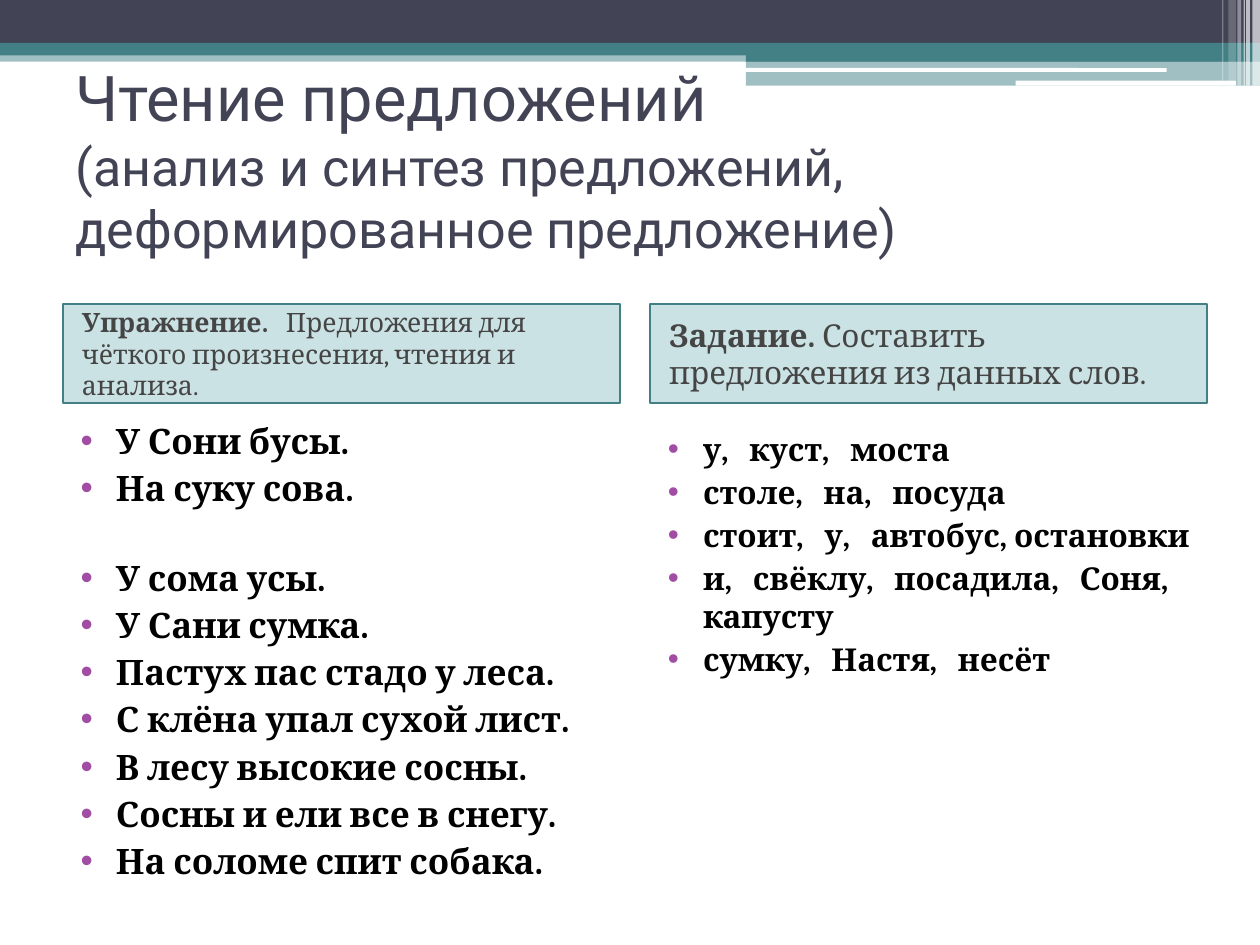
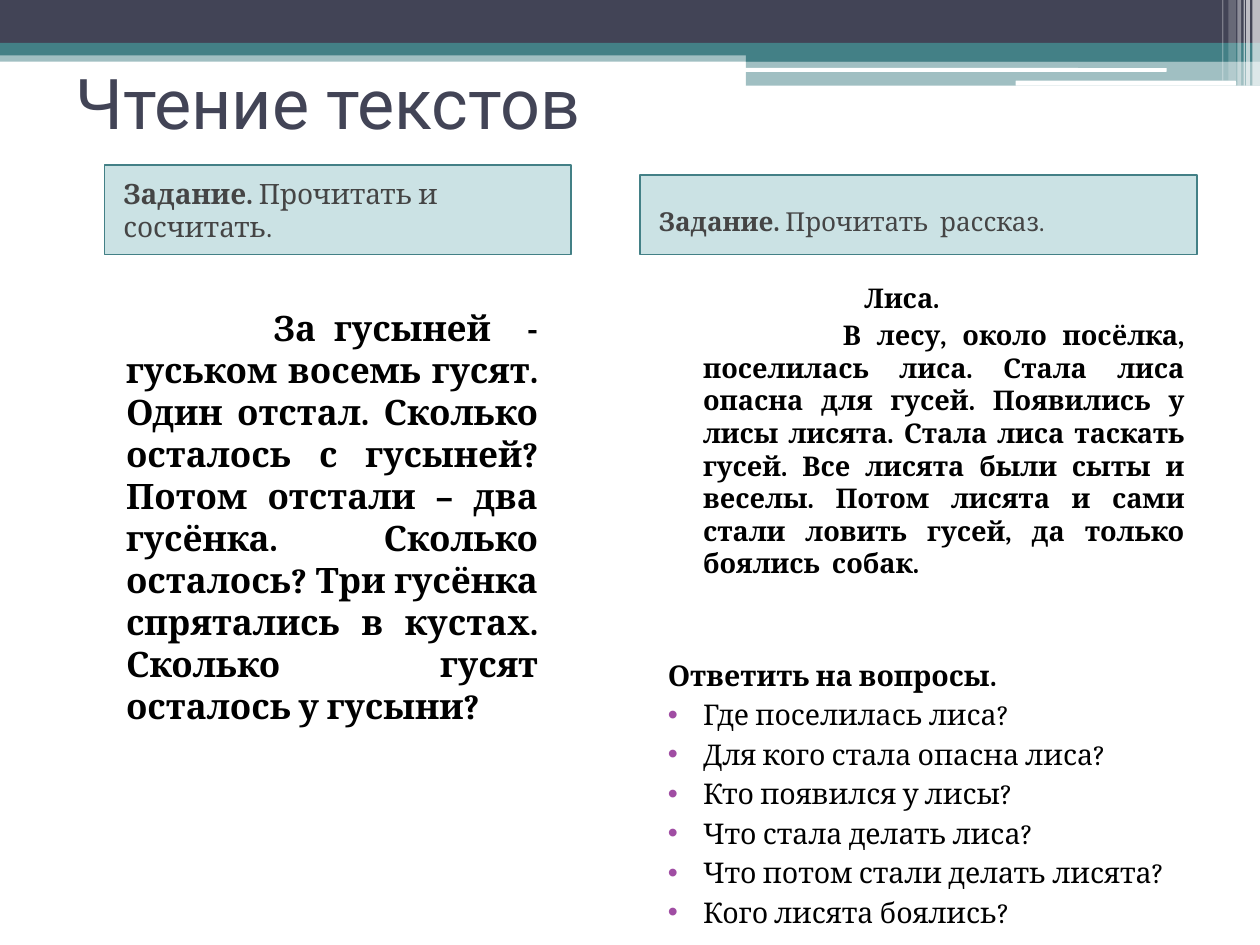
from dataclasses import dataclass

from lxml.etree import SubElement
from pptx import Presentation
from pptx.dml.color import RGBColor
from pptx.enum.shapes import MSO_SHAPE
from pptx.enum.text import MSO_ANCHOR, MSO_AUTO_SIZE, PP_ALIGN
from pptx.oxml.ns import qn
from pptx.util import Inches, Pt

NAVY = RGBColor(0x42, 0x44, 0x56)
TEAL = RGBColor(0x43, 0x80, 0x86)
AQUA = RGBColor(0x32, 0x8E, 0x97)
PURPLE = RGBColor(0xA0, 0x4D, 0xA3)
GRAY = RGBColor(0x45, 0x45, 0x45)
BLACK = RGBColor(0, 0, 0)
WHITE = RGBColor(0xFF, 0xFF, 0xFF)
TITLE_FONT = "Roboto"
BODY_FONT = "Cambria"
COMPARISON_LAYOUT = 4
TITLE, LEFT_TASK, LEFT_BODY, RIGHT_TASK, RIGHT_BODY = range(5)
HANGING = -0.28


@dataclass(frozen=True)
class Box:
    left: float
    top: float
    width: float
    height: float


@dataclass(frozen=True)
class Band:
    box: Box
    color: RGBColor
    opacity: int = 100
    rounded: bool = False


@dataclass(frozen=True)
class Line:
    """One body paragraph with its size and indents."""
    text: str
    size: float
    bold: bool = True
    bullet: bool = True
    first_indent: float = HANGING
    before: float = 3
    justified: bool = False


@dataclass(frozen=True)
class Task:
    box: Box
    label: str
    text: str
    size: float
    top_inset: float = 0.05


@dataclass(frozen=True)
class Column:
    task: Task
    box: Box
    lines: list[Line]


@dataclass(frozen=True)
class Lesson:
    title_box: Box
    title_lines: list[tuple[str, float]]
    left: Column
    right: Column
    title_bottom_inset: float = 0.05


BANDS = [
    Band(Box(0, 0.4, 10, 0.09), TEAL, 50),
    Band(Box(0, 0, 10, 0.34), NAVY),
    Band(Box(0, 0.34, 10, 0.1), TEAL),
    Band(Box(5.92, 0.39, 4.08, 0.1), TEAL),
    Band(Box(5.92, 0.48, 4.08, 0.2), TEAL, 50),
    Band(Box(5.91, 0.54, 3.35, 0.03), WHITE, rounded=True),
    Band(Box(8.06, 0.64, 1.75, 0.04), WHITE, rounded=True),
] + [
    Band(Box(left, 0, width, height), WHITE, opacity)
    for left, width, height, opacity in [
        (9.94, 0.06, 0.68, 65), (9.89, 0.03, 0.68, 65), (9.87, 0.01, 0.68, 60),
        (9.82, 0.03, 0.68, 40), (9.75, 0.06, 0.64, 20), (9.7, 0.01, 0.64, 30),
    ]
]

SENTENCES = Lesson(
    Box(0.5, 0.99, 9, 1.02),
    [("Чтение предложений", 36),
     ("(анализ и синтез предложений, деформированное предложение)", 29.7)],
    Column(
        Task(Box(0.5, 2.41, 4.42, 0.79), "Упражнение. ",
             "  Предложения для чёткого произнесения, чтения и анализа.", 15.2),
        Box(0.42, 3.28, 4.43, 3.93),
        [Line("У Сони бусы.", 20),
         Line("На суку сова.", 20),
         Line("У сома усы.", 20, before=27)]
        + [Line(sentence, 20) for sentence in (
            "У Сани сумка.", "Пастух пас стадо у леса.",
            "С клёна упал сухой лист.", "В лесу высокие сосны.",
            "Сосны и ели все в снегу.", "На соломе спит собака.")],
    ),
    Column(
        Task(Box(5.16, 2.41, 4.42, 0.79), "Задание. ",
             "Составить предложения из данных слов.", 18),
        Box(5.08, 3.36, 4.65, 3.86),
        [Line(words, 18) for words in (
            "у,   куст,   моста", "столе,   на,   посуда",
            "стоит,   у,   автобус, остановки",
            "и,   свёклу,   посадила,   Соня,   капусту",
            "сумку,   Настя,   несёт")],
    ),
    title_bottom_inset=0.53,
)

TEXTS = Lesson(
    Box(0.5, 0.3, 9, 1.01),
    [("Чтение текстов", 40)],
    Column(
        Task(Box(0.83, 1.31, 3.7, 0.71), "Задание. ", "Прочитать и сосчитать.", 16),
        Box(0.5, 2.38, 3.87, 4.32),
        [Line("За гусыней  - гуськом восемь гусят. Один отстал. Сколько осталось "
              "с гусыней? Потом отстали – два гусёнка. Сколько осталось? Три гусёнка "
              "спрятались в кустах. Сколько гусят осталось у гусыни?",
              20, bullet=False, first_indent=1.17, justified=True)],
    ),
    Column(
        Task(Box(5.08, 1.39, 4.42, 0.63), "Задание. ", "Прочитать  рассказ.", 14.9,
             top_inset=0.15),
        Box(5.08, 2.18, 4.42, 4.88),
        [Line("Лиса.", 15.5, bullet=False, first_indent=1.28),
         Line("В лесу, около посёлка, поселилась лиса. Стала лиса опасна для гусей. "
              "Появились у лисы лисята. Стала лиса таскать гусей. Все лисята были "
              "сыты и веселы. Потом лисята и сами стали ловить гусей, да только "
              "боялись  собак.",
              15.5, bullet=False, first_indent=1.11, justified=True),
         Line("Ответить на вопросы.", 16.3, bullet=False, before=45)]
        + [Line(question, 16.3, bold=False) for question in (
            "Где поселилась лиса?", "Для кого стала опасна лиса?",
            "Кто появился у лисы?", "Что стала делать лиса?",
            "Что потом стали делать лисята?", "Кого лисята боялись?")],
    ),
)


def add_text(paragraph, text: str, *, size: float, color: RGBColor = BLACK,
             font: str = BODY_FONT, bold: bool = False) -> None:
    run = paragraph.add_run()
    run.text = text
    run.font.size = Pt(size)
    run.font.color.rgb = color
    run.font.name = font
    run.font.bold = bold


def set_opacity(shape, percent: int) -> None:
    color = shape.element.spPr.find(f"{qn('a:solidFill')}/{qn('a:srgbClr')}")
    SubElement(color, qn("a:alpha"), val=str(percent * 1000))


def place(placeholder, box: Box, anchor: MSO_ANCHOR):
    """Move a placeholder and return its text frame, ready for text."""
    placeholder.left, placeholder.top = Inches(box.left), Inches(box.top)
    placeholder.width, placeholder.height = Inches(box.width), Inches(box.height)
    frame = placeholder.text_frame
    frame.word_wrap = True
    frame.auto_size = MSO_AUTO_SIZE.NONE
    frame.vertical_anchor = anchor
    return frame


def next_paragraph(frame, index: int, *, before: float = 0, margin: float = 0,
                   indent: float = 0, bullet: bool = False,
                   align: PP_ALIGN = PP_ALIGN.LEFT):
    paragraph = frame.paragraphs[0] if index == 0 else frame.add_paragraph()
    paragraph.alignment = align
    paragraph.space_before = Pt(before)
    properties = paragraph._p.get_or_add_pPr()
    properties.set("marL", str(Inches(margin)))
    properties.set("indent", str(Inches(indent)))
    if bullet:
        bullet_color = SubElement(properties, qn("a:buClr"))
        SubElement(bullet_color, qn("a:srgbClr"), val=str(PURPLE))
        SubElement(properties, qn("a:buFont"), typeface="Arial")
        SubElement(properties, qn("a:buChar"), char="•")
    else:
        SubElement(properties, qn("a:buNone"))
    return paragraph


def fill_task(placeholder, task: Task) -> None:
    placeholder.fill.solid()
    placeholder.fill.fore_color.rgb = AQUA
    set_opacity(placeholder, 25)
    placeholder.line.color.rgb = TEAL
    placeholder.line.width = Pt(1)
    frame = place(placeholder, task.box, MSO_ANCHOR.MIDDLE)
    frame.margin_top = Inches(task.top_inset)
    paragraph = next_paragraph(frame, 0, before=3, margin=0.05)
    add_text(paragraph, task.label, size=task.size, color=GRAY, bold=True)
    add_text(paragraph, task.text, size=task.size, color=GRAY)


def fill_column(task_holder, body_holder, column: Column) -> None:
    fill_task(task_holder, column.task)
    frame = place(body_holder, column.box, MSO_ANCHOR.TOP)
    for index, line in enumerate(column.lines):
        paragraph = next_paragraph(
            frame, index, before=line.before, margin=0.4, indent=line.first_indent,
            bullet=line.bullet,
            align=PP_ALIGN.JUSTIFY if line.justified else PP_ALIGN.LEFT)
        add_text(paragraph, line.text, size=line.size, bold=line.bold)


def add_lesson(presentation, layout, lesson: Lesson):
    slide = presentation.slides.add_slide(layout)
    holders = slide.placeholders
    frame = place(holders[TITLE], lesson.title_box, MSO_ANCHOR.MIDDLE)
    frame.margin_bottom = Inches(lesson.title_bottom_inset)
    for index, (text, size) in enumerate(lesson.title_lines):
        add_text(next_paragraph(frame, index), text, size=size, color=NAVY,
                 font=TITLE_FONT)
    fill_column(holders[LEFT_TASK], holders[LEFT_BODY], lesson.left)
    fill_column(holders[RIGHT_TASK], holders[RIGHT_BODY], lesson.right)
    return slide


def add_band(slide, band: Band):
    kind = MSO_SHAPE.ROUNDED_RECTANGLE if band.rounded else MSO_SHAPE.RECTANGLE
    box = band.box
    shape = slide.shapes.add_shape(kind, Inches(box.left), Inches(box.top),
                                   Inches(box.width), Inches(box.height))
    shape.shadow.inherit = False
    shape.fill.solid()
    shape.fill.fore_color.rgb = band.color
    shape.line.fill.background()
    if band.opacity < 100:
        set_opacity(shape, band.opacity)
    return shape


def move_bands_to_layout(slide, layout) -> None:
    """Draw the bands once and hand them to the layout all slides share."""
    tree = layout.shapes.element
    for footer in [holder for holder in layout.placeholders
                   if holder.placeholder_format.idx >= 10]:
        tree.remove(footer.element)
    bands = [add_band(slide, band) for band in BANDS]
    for band in bands:
        tree.append(band.element)


def main() -> None:
    presentation = Presentation()
    presentation.slide_width, presentation.slide_height = Inches(10), Inches(7.5)
    layout = presentation.slide_layouts[COMPARISON_LAYOUT]
    slides = [add_lesson(presentation, layout, lesson) for lesson in (SENTENCES, TEXTS)]
    move_bands_to_layout(slides[0], layout)
    presentation.save("out.pptx")


if __name__ == "__main__":
    main()
